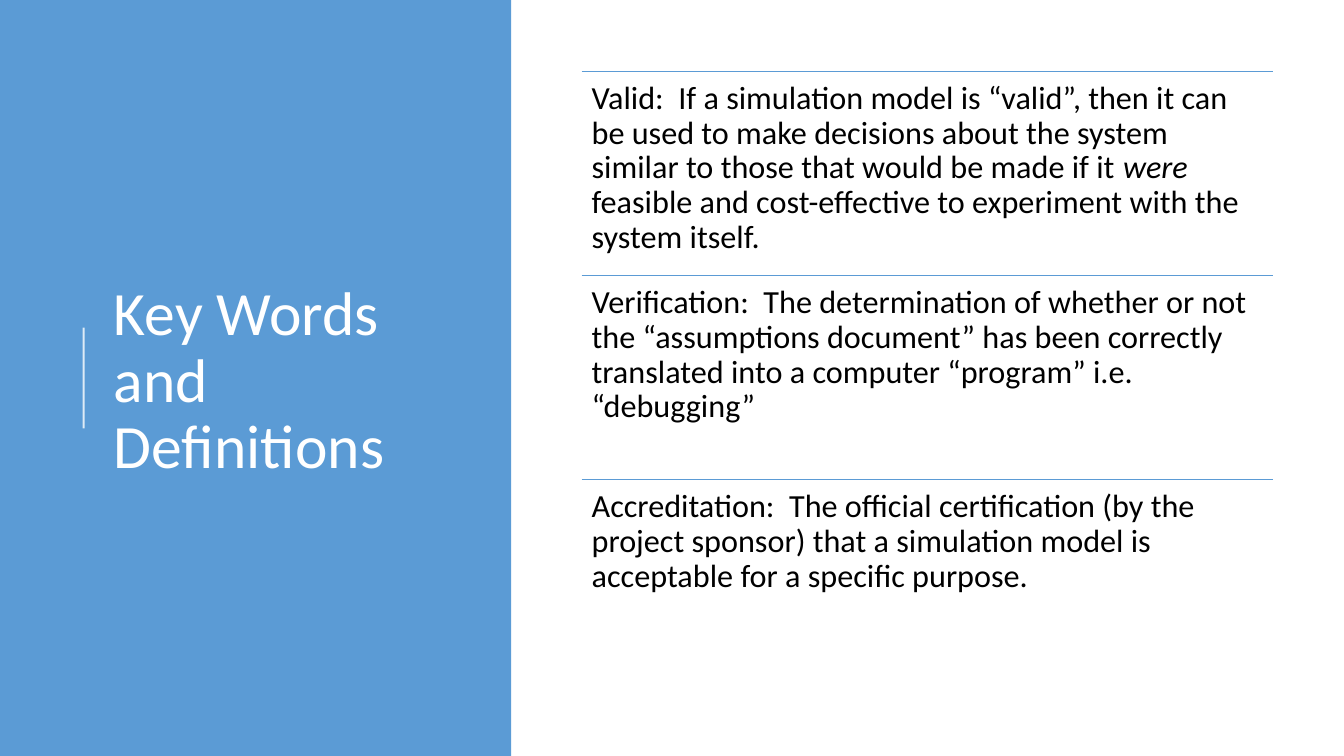
"""Build the key words and definitions slide."""
import lxml.etree
import pptx
import pptx.dml.color
import pptx.enum.shapes
import pptx.enum.text
import pptx.oxml.ns
import pptx.util

Inches = pptx.util.Inches
Anchor = pptx.enum.text.MSO_ANCHOR

TITLE = "Key Words and Definitions"
DEFINITIONS = [
    [
        ("Valid:  If a simulation model is “valid”, then it can be used to make decisions "
         "about the system similar to those that would be made if it ", False),
        ("were", True),
        (" feasible and cost-effective to experiment with the system itself.", False),
    ],
    [("Verification:  The determination of whether or not the “assumptions document” has been "
      "correctly translated into a computer “program” i.e. “debugging”", False)],
    [("Accreditation:  The official certification (by the project sponsor) that a simulation "
      "model is acceptable for a specific purpose.", False)],
]
BLUE, WHITE, BLACK = "5B9BD5", "FFFFFF", "000000"
LIST_LEFT, LIST_TOP, LIST_WIDTH, ROW_HEIGHT = 5.77, 0.71, 6.86, 2.025


def color(value):
    return pptx.dml.color.RGBColor.from_string(value)


def add_text(page, spans, left, top, width, height, *, size, ink, anchor, inset=(0.1, 0.05), after=0):
    box = page.shapes.add_textbox(Inches(left), Inches(top), Inches(width), Inches(height))
    frame = box.text_frame
    frame.word_wrap = True
    frame.vertical_anchor = anchor
    frame.margin_left = frame.margin_right = Inches(inset[0])
    frame.margin_top = frame.margin_bottom = Inches(inset[1])
    para = frame.paragraphs[0]
    para.line_spacing = 0.9
    para.space_after = pptx.util.Pt(after)
    for text, italic in spans:
        span = para.add_run()
        span.text = text
        span.font.name = "Calibri"
        span.font.size = pptx.util.Pt(size)
        span.font.italic = italic
        span.font.color.rgb = color(ink)


def add_rule(page, start, end, ink, width, opacity=100):
    rule = page.shapes.add_connector(
        pptx.enum.shapes.MSO_CONNECTOR.STRAIGHT, *map(Inches, start + end))
    rule.line.color.rgb = color(ink)
    rule.line.width = pptx.util.Pt(width)
    properties = rule._element.spPr
    if opacity < 100:
        tint = properties.find(".//" + pptx.oxml.ns.qn("a:srgbClr"))
        alpha = lxml.etree.SubElement(tint, pptx.oxml.ns.qn("a:alpha"))
        alpha.set("val", str(opacity * 1000))
    lxml.etree.SubElement(properties, pptx.oxml.ns.qn("a:effectLst"))


def main():
    deck = pptx.Presentation()
    deck.slide_width, deck.slide_height = Inches(13.33), Inches(7.5)
    page = deck.slides.add_slide(deck.slide_layouts[6])

    panel = page.shapes.add_shape(
        pptx.enum.shapes.MSO_SHAPE.RECTANGLE, 0, 0, Inches(5.07), deck.slide_height)
    panel.shadow.inherit = False
    panel.fill.solid()
    panel.fill.fore_color.rgb = color(BLUE)
    panel.line.fill.background()
    add_rule(page, (0.83, 4.25), (0.83, 3.25), WHITE, 1.5, opacity=80)
    add_text(page, [(TITLE, False)], 1.03, 0.78, 3.69, 6.02,
             size=44, ink=WHITE, anchor=Anchor.MIDDLE)

    for row, spans in enumerate(DEFINITIONS):
        top = LIST_TOP + row * ROW_HEIGHT
        add_rule(page, (LIST_LEFT, top), (LIST_LEFT + LIST_WIDTH, top), BLUE, 1)
        add_text(page, spans, LIST_LEFT, top, LIST_WIDTH, ROW_HEIGHT,
                 size=23, ink=BLACK, anchor=Anchor.TOP, inset=(0.1, 0.1), after=8)

    deck.save("out.pptx")


if __name__ == "__main__":
    main()
